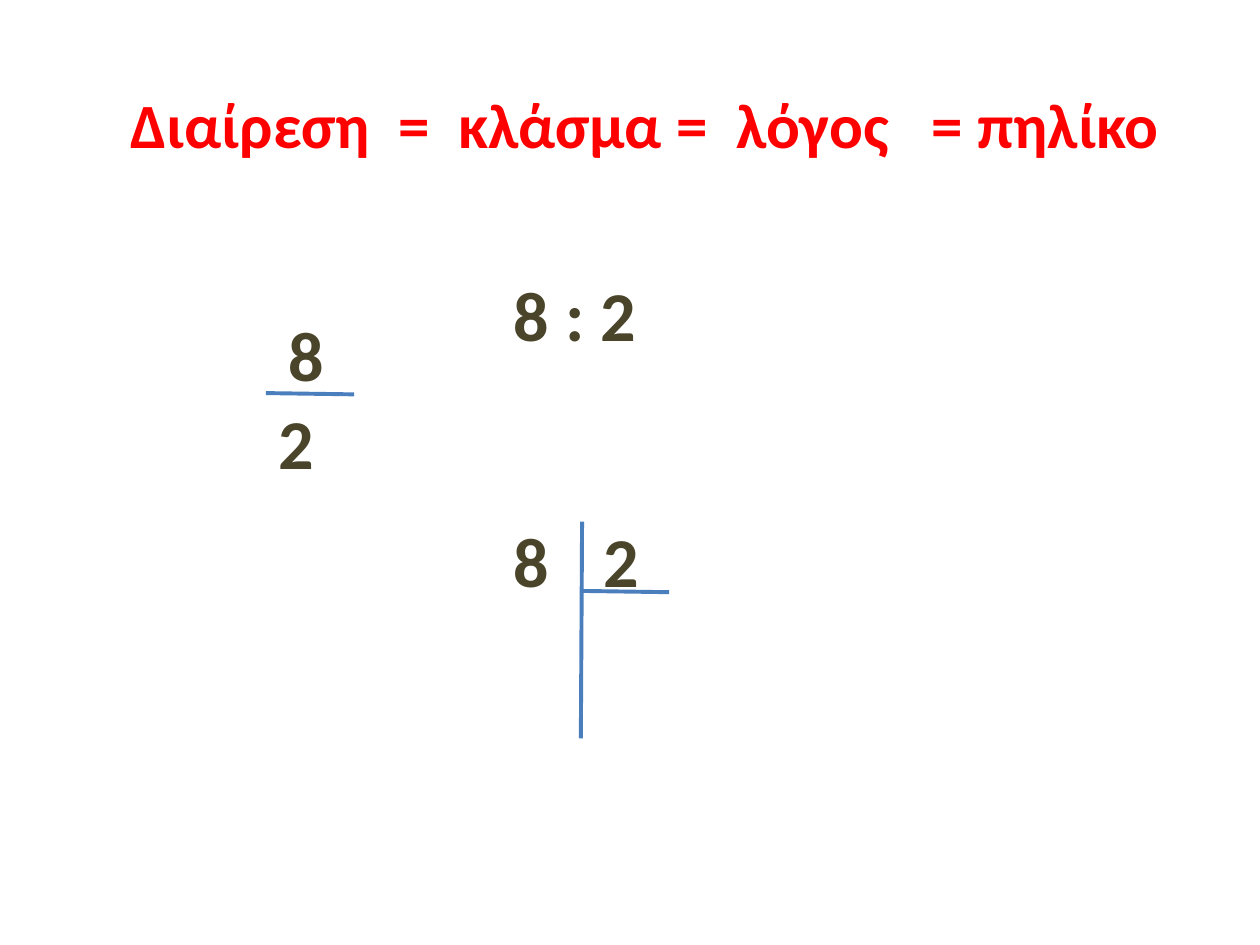
import pptx
import pptx.dml.color
import pptx.enum.shapes
import pptx.enum.text
import pptx.oxml.ns
import pptx.util
from lxml import etree

Inches = pptx.util.Inches
Pt = pptx.util.Pt
COLORS = {"page": "FFFFFF", "title": "FF0000", "digit": "4A452A", "line": "4B7EBC"}
SPACE_WIDTH = 8.1  # points, one space of the bold 36 pt title
# Each title word with the number of spaces that follow it
TITLE_WORDS = [("Διαίρεση", 2), ("=", 2), ("κλάσμα", 1), ("=", 2),
               ("λόγος", 3), ("=", 1), ("πηλίκο", 0)]


def rgb(name):
    return pptx.dml.color.RGBColor.from_string(COLORS[name])


def add_span(para, text, *, size, color, spacing=0):
    """Add bold text; spacing widens each character by that many points."""
    span = para.add_run()
    span.text = text
    span.font.name = "Calibri"
    span.font.size = Pt(size)
    span.font.bold = True
    span.font.color.rgb = rgb(color)
    if spacing:
        span.font._element.set("spc", str(round(spacing * 100)))


def add_title(page):
    title = page.shapes.title
    title.left, title.top = Inches(0), Inches(0.47)
    title.width, title.height = Inches(10.23), Inches(1.02)
    frame = title.text_frame
    frame.vertical_anchor = pptx.enum.text.MSO_ANCHOR.MIDDLE
    para = frame.paragraphs[0]
    para.alignment = pptx.enum.text.PP_ALIGN.CENTER
    for word, spaces in TITLE_WORDS:
        add_span(para, word, size=36, color="title")
        if spaces:
            add_span(para, " ", size=36, color="title",
                     spacing=(spaces - 1) * SPACE_WIDTH)


def add_number(page, text, left, top, width, wrap=True):
    box = page.shapes.add_textbox(Inches(left), Inches(top), Inches(width), Inches(0.77))
    frame = box.text_frame
    frame.word_wrap = wrap
    frame.auto_size = pptx.enum.text.MSO_AUTO_SIZE.SHAPE_TO_FIT_TEXT
    add_span(frame.paragraphs[0], text, size=40, color="digit")


def add_line(page, start, end):
    line = page.shapes.add_connector(
        pptx.enum.shapes.MSO_CONNECTOR.STRAIGHT,
        *(Inches(value) for value in (*start, *end)))
    line.line.color.rgb = rgb("line")
    line.line.width = Pt(2.25)
    etree.SubElement(line._element.spPr, pptx.oxml.ns.qn("a:effectLst"))


def add_fraction(page):
    add_line(page, (2.11, 3.12), (2.81, 3.13))
    add_number(page, "8", 2.19, 2.42, 0.55)
    add_number(page, "2", 2.11, 3.12, 0.49, wrap=False)


def add_long_division(page):
    add_line(page, (4.61, 4.69), (5.31, 4.7))
    add_number(page, "2", 4.69, 4.06, 0.55)
    add_line(page, (4.62, 4.14), (4.61, 5.86))
    add_number(page, "8", 3.98, 4.06, 0.49, wrap=False)


def main():
    deck = pptx.Presentation()
    deck.slide_width, deck.slide_height = Inches(10), Inches(7.5)
    page = deck.slides.add_slide(deck.slide_layouts[5])
    page.background.fill.solid()
    page.background.fill.fore_color.rgb = rgb("page")
    add_title(page)
    add_number(page, "8 : 2", 3.98, 2.11, 1.72)
    add_fraction(page)
    add_long_division(page)
    deck.save("out.pptx")


if __name__ == "__main__":
    main()
